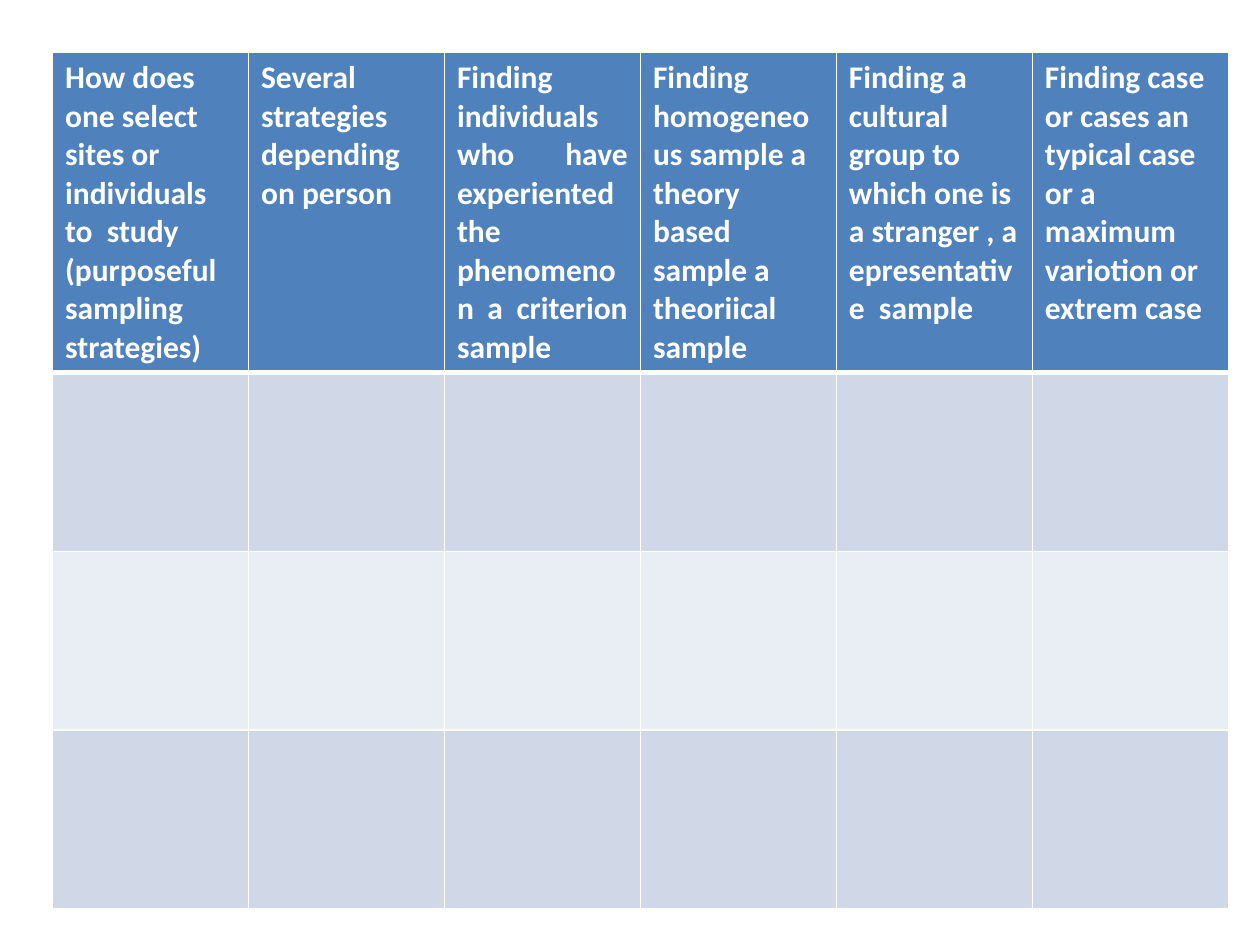
from lxml import etree
from pptx import Presentation
from pptx.dml.color import RGBColor
from pptx.enum.text import PP_ALIGN
from pptx.oxml.ns import qn
from pptx.util import Cm, Pt

LEFT = PP_ALIGN.LEFT
JUSTIFY = PP_ALIGN.JUSTIFY
BLANK_LAYOUT = 6

HEADINGS = [
    ("How does one select sites or individuals to  study (purposeful sampling strategies)", LEFT),
    ("Several strategies  depending  on person", LEFT),
    ("Finding individuals who have experiented  the  phenomenon a criterion sample", JUSTIFY),
    ("Finding homogeneous sample a theory based  sample a theoriical sample", LEFT),
    ("Finding a cultural group to which one is  a stranger , a epresentative  sample", LEFT),
    ("Finding case  or cases an typical case or a maximum variotion or extrem case", LEFT),
]
BODY_ROWS = 3


def color(hex_string):
    return RGBColor.from_string(hex_string)


class SlideBuilder:
    heading_fill = "4F81BD"
    band_fills = ("D0D8E8", "E9EDF4")
    border_color = "FFFFFF"
    thin, thick = Pt(1), Pt(3)
    heading_font = {"name": "Calibri", "size": Pt(18), "bold": True}
    heading_color = "FFFFFF"

    def __init__(self, slide):
        self.slide = slide

    def borders(self, cell, top, bottom):
        properties = cell._tc.get_or_add_tcPr()
        widths = {"a:lnL": self.thin, "a:lnR": self.thin, "a:lnT": top, "a:lnB": bottom}
        for tag, width in widths.items():
            line = etree.SubElement(properties, qn(tag), w=str(width))
            fill = etree.SubElement(line, qn("a:solidFill"))
            etree.SubElement(fill, qn("a:srgbClr"), val=self.border_color)

    def cell(self, cell, fill, top, bottom):
        self.borders(cell, top, bottom)
        cell.fill.solid()
        cell.fill.fore_color.rgb = color(fill)

    def heading(self, cell, text, alignment):
        self.cell(cell, self.heading_fill, self.thin, self.thick)
        paragraph = cell.text_frame.paragraphs[0]
        paragraph.alignment = alignment
        run = paragraph.add_run()
        run.text = text
        for name, value in self.heading_font.items():
            setattr(run.font, name, value)
        run.font.color.rgb = color(self.heading_color)

    def table(self, left, top, column_width, row_height, height, headings, body_rows):
        """Add a heading row over empty banded rows; the heading row grows with its text."""
        shape = self.slide.shapes.add_table(
            body_rows + 1, len(headings), left, top, column_width * len(headings), height
        )
        table = shape.table
        for column in table.columns:
            column.width = column_width
        for row in table.rows:
            row.height = row_height
        shape.height = height

        for index, (text, alignment) in enumerate(headings):
            self.heading(table.cell(0, index), text, alignment)
        for row_index in range(1, body_rows + 1):
            fill = self.band_fills[(row_index - 1) % 2]
            top_width = self.thick if row_index == 1 else self.thin
            for cell in table.rows[row_index].cells:
                self.cell(cell, fill, top_width, self.thin)


def main():
    presentation = Presentation()
    presentation.slide_width = Cm(25.4)
    presentation.slide_height = Cm(19.05)
    slide = presentation.slides.add_slide(presentation.slide_layouts[BLANK_LAYOUT])
    builder = SlideBuilder(slide)
    builder.table(
        left=Cm(1.06),
        top=Cm(1.06),
        column_width=Cm(3.95),
        row_height=Cm(3.6),
        height=Cm(17.15),
        headings=HEADINGS,
        body_rows=BODY_ROWS,
    )
    presentation.save("out.pptx")


if __name__ == "__main__":
    main()
